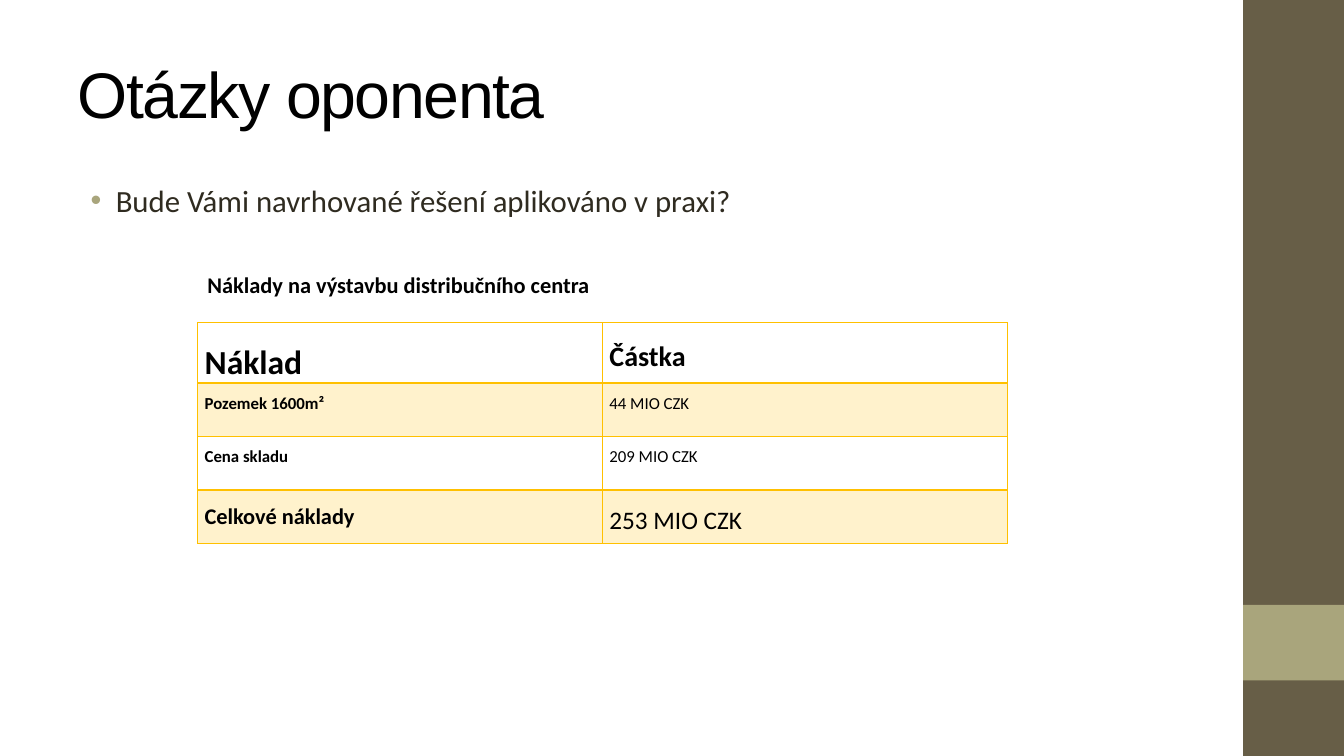
from dataclasses import dataclass

from lxml.etree import SubElement
from pptx import Presentation
from pptx.dml.color import RGBColor
from pptx.enum.shapes import MSO_SHAPE
from pptx.enum.text import MSO_ANCHOR, PP_ALIGN
from pptx.oxml.ns import qn
from pptx.slide import Slide
from pptx.table import _Cell
from pptx.text.text import TextFrame, _Paragraph
from pptx.util import Inches, Pt

BLACK = RGBColor(0x00, 0x00, 0x00)
BODY_TEXT = RGBColor(0x2F, 0x2B, 0x20)
BROWN = RGBColor(0x67, 0x5E, 0x47)
OLIVE = RGBColor(0xA9, 0xA5, 0x7C)
GOLD = RGBColor(0xFF, 0xC0, 0x00)
BAND_ALPHA = 20000


@dataclass(frozen=True)
class SideBand:
    top: float
    height: float
    color: RGBColor


@dataclass(frozen=True)
class CostText:
    text: str
    size: int
    bold: bool = False


SIDE_BANDS = [SideBand(0, 7.5, BROWN), SideBand(6, 0.75, OLIVE)]
COSTS = [
    (CostText("Náklad", 24, True), CostText("Částka", 20, True)),
    (CostText("Pozemek 1600m²", 12, True), CostText("44 MIO CZK", 12)),
    (CostText("Cena skladu", 12, True), CostText("209 MIO CZK", 12)),
    (CostText("Celkové náklady", 16, True), CostText("253 MIO CZK", 18)),
]


def write(paragraph: _Paragraph, text: str, *, size: int, font: str = "Calibri",
          color: RGBColor = BLACK, bold: bool = False) -> None:
    run = paragraph.add_run()
    run.text = text
    run.font.size = Pt(size)
    run.font.name = font
    run.font.color.rgb = color
    run.font.bold = bold


def add_side_band(slide: Slide, band: SideBand) -> None:
    rectangle = slide.shapes.add_shape(
        MSO_SHAPE.RECTANGLE, Inches(12.33), Inches(band.top), Inches(1), Inches(band.height))
    rectangle.shadow.inherit = False
    rectangle.fill.solid()
    rectangle.fill.fore_color.rgb = band.color
    rectangle.line.fill.background()


def add_text_area(slide: Slide, left: float, top: float, width: float, height: float) -> TextFrame:
    frame = slide.shapes.add_textbox(
        Inches(left), Inches(top), Inches(width), Inches(height)).text_frame
    frame.word_wrap = True
    return frame


def add_bullet(paragraph: _Paragraph) -> None:
    properties = paragraph._p.get_or_add_pPr()
    properties.set("marL", str(Inches(0.38)))
    properties.set("indent", str(Inches(-0.25)))
    bullet_color = SubElement(properties, qn("a:buClr"))
    SubElement(bullet_color, qn("a:srgbClr"), val=str(OLIVE))
    SubElement(properties, qn("a:buFont"), typeface="Arial")
    SubElement(properties, qn("a:buChar"), char="•")


def set_borders(cell: _Cell, top: float, bottom: float) -> None:
    properties = cell._tc.get_or_add_tcPr()
    for side, width in (("L", 1), ("R", 1), ("T", top), ("B", bottom)):
        line = SubElement(properties, qn(f"a:ln{side}"), w=str(Pt(width)))
        fill = SubElement(line, qn("a:solidFill"))
        SubElement(fill, qn("a:srgbClr"), val=str(GOLD))


def fill_band(cell: _Cell) -> None:
    cell.fill.solid()
    cell.fill.fore_color.rgb = GOLD
    color = cell._tc.tcPr.find(qn("a:solidFill")).find(qn("a:srgbClr"))
    SubElement(color, qn("a:alpha"), val=str(BAND_ALPHA))


def add_cost_table(slide: Slide) -> None:
    table = slide.shapes.add_table(
        len(COSTS), 2, Inches(1.96), Inches(3.2), Inches(8.03), Inches(2.1)).table
    table.horz_banding = False
    for row_index, costs in enumerate(COSTS):
        table.rows[row_index].height = Inches(0.53)
        for column_index, cost in enumerate(costs):
            cell = table.cell(row_index, column_index)
            cell.margin_left = cell.margin_right = Inches(0.07)
            cell.margin_top = cell.margin_bottom = 0
            set_borders(cell, top=2 if row_index == 1 else 1, bottom=2 if row_index == 0 else 1)
            if row_index % 2:
                fill_band(cell)
            else:
                cell.fill.background()
            paragraph = cell.text_frame.paragraphs[0]
            paragraph.alignment = PP_ALIGN.JUSTIFY
            paragraph.line_spacing = 1.5
            write(paragraph, cost.text, size=cost.size, bold=cost.bold)


def add_title(slide: Slide) -> None:
    title = slide.shapes.title
    title.left, title.top = Inches(0.67), Inches(0.3)
    title.width, title.height = Inches(11.11), Inches(1.25)
    title.text_frame.vertical_anchor = MSO_ANCHOR.MIDDLE
    heading = title.text_frame.paragraphs[0]
    heading.alignment = PP_ALIGN.LEFT
    write(heading, "Otázky oponenta", size=46, font="Arial")
    heading.runs[0].font._element.set("spc", "-100")


def main() -> None:
    presentation = Presentation()
    presentation.slide_width, presentation.slide_height = Inches(13.33), Inches(7.5)
    slide = presentation.slides.add_slide(presentation.slide_layouts[5])
    for band in SIDE_BANDS:
        add_side_band(slide, band)
    add_title(slide)

    question = add_text_area(slide, 0.67, 1.75, 11.11, 5.25).paragraphs[0]
    add_bullet(question)
    write(question, "Bude Vámi navrhované řešení aplikováno v praxi?", size=22, color=BODY_TEXT)

    add_cost_table(slide)

    caption_area = add_text_area(slide, 1.96, 2.64, 8.27, 0.37)
    caption_area.vertical_anchor = MSO_ANCHOR.MIDDLE
    caption = caption_area.paragraphs[0]
    caption.alignment = PP_ALIGN.JUSTIFY
    write(caption, "Náklady na výstavbu distribučního centra", size=16, bold=True)

    presentation.save("out.pptx")


if __name__ == "__main__":
    main()
